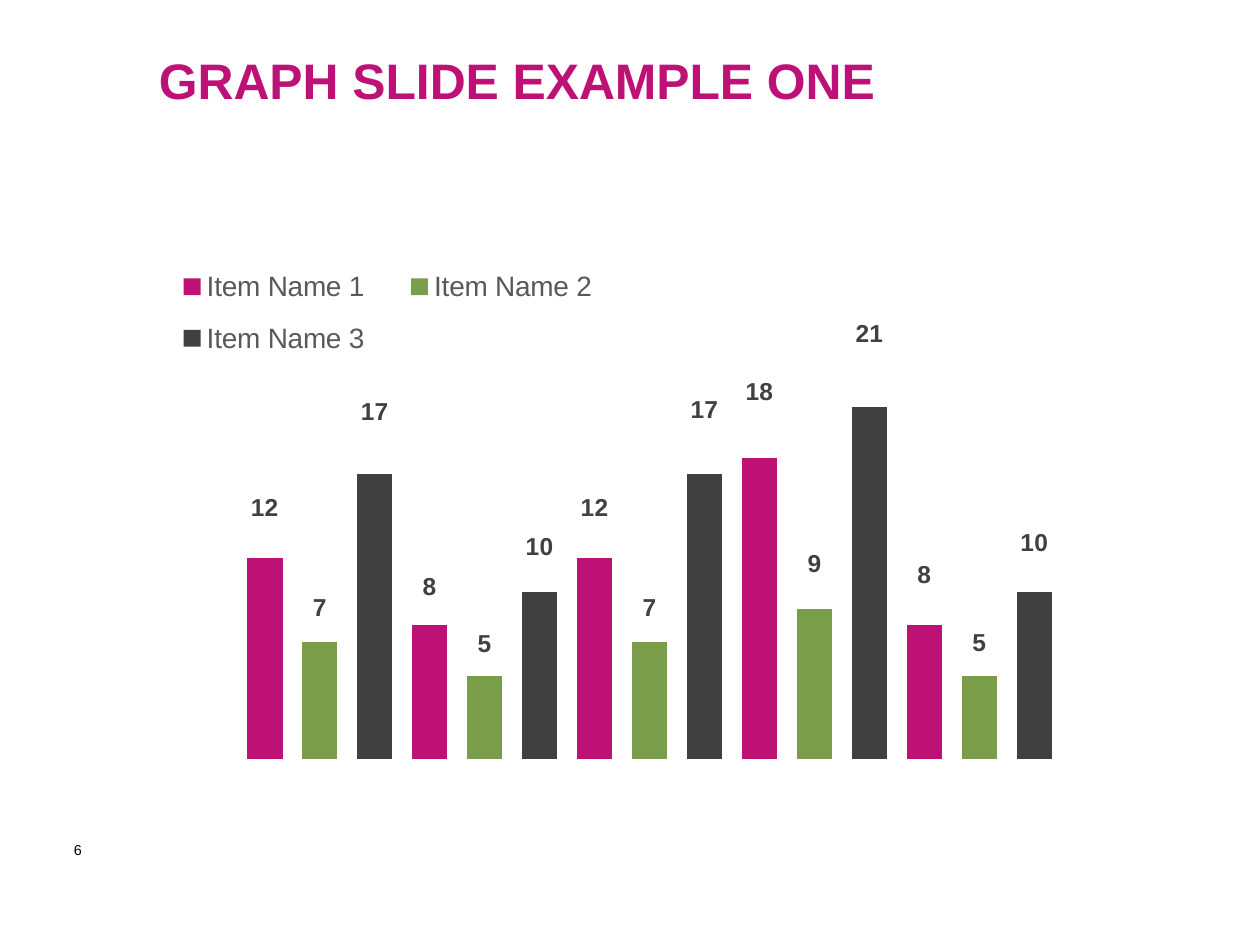
from lxml import etree
from pptx import Presentation
from pptx.chart.data import CategoryChartData
from pptx.dml.color import RGBColor
from pptx.enum import chart as charts, text
from pptx.oxml.ns import qn
from pptx.util import Cm, Pt

MAGENTA = RGBColor(0xBD, 0x11, 0x76)
GREEN = RGBColor(0x79, 0x9D, 0x49)
CHARCOAL = RGBColor(0x40, 0x40, 0x41)
LABEL_GREY = RGBColor(0x40, 0x40, 0x40)
LEGEND_GREY = RGBColor(0x59, 0x59, 0x59)
BLACK = RGBColor(0, 0, 0)

# Bars run left to right, cycling through the three items
VALUES = [12, 7, 17, 8, 5, 10, 12, 7, 17, 18, 9, 21, 8, 5, 10]
# How far each label is raised, in percent of the chart height
LIFTS = [10.6, 8.2, 12.6, 8.8, 7.8, 9.8, 10.6, 8.2, 12.8,
         13, 9.8, 14.3, 10.6, 8, 10.5]
ITEMS = [("Item Name 1", MAGENTA), ("Item Name 2", GREEN), ("Item Name 3", CHARCOAL)]


def style_font(font, size, color, bold=False):
    font.name, font.size, font.bold = "Arial", Pt(size), bold
    font.color.rgb = color


def set_layout(parent, index, modes, **percents):
    """Give a chart part a manual layout, in percent of the chart."""
    for old in parent.findall(qn("c:layout")):
        parent.remove(old)
    layout = etree.Element(qn("c:layout"))
    manual = etree.SubElement(layout, qn("c:manualLayout"))
    shares = {name: str(value / 100) for name, value in percents.items()}
    for name, value in {**modes, **shares}.items():
        etree.SubElement(manual, qn("c:" + name)).set("val", value)
    parent.insert(index, layout)


def add_title(page, left, top, width, height):
    title = page.shapes.title
    title.left, title.top, title.width, title.height = left, top, width, height
    frame = title.text_frame
    frame.text = "GRAPH SLIDE EXAMPLE ONE"
    frame.vertical_anchor = text.MSO_ANCHOR.MIDDLE
    frame.margin_bottom = Cm(0.33)
    para = frame.paragraphs[0]
    para.alignment = text.PP_ALIGN.LEFT
    style_font(para.font, 28.5, MAGENTA, True)


def add_bar_chart(page, left, top, width, height):
    data = CategoryChartData()
    data.categories = [str(number + 1) for number in range(len(VALUES))]
    stack = list(reversed(list(enumerate(ITEMS))))
    for item, (name, _) in stack:
        data.add_series(name, [value if slot % 3 == item else None
                               for slot, value in enumerate(VALUES)])
    chart = page.shapes.add_chart(charts.XL_CHART_TYPE.COLUMN_STACKED,
                                  left, top, width, height, data).chart
    chart.has_title = False
    style_font(chart.font, 10, BLACK)

    # Hidden axes
    chart.value_axis.minimum_scale, chart.value_axis.maximum_scale = 0, 25
    chart.value_axis.has_major_gridlines = False
    chart.value_axis.visible = chart.category_axis.visible = False

    # Bars and their raised labels, without leader lines
    plot = chart.plots[0]
    plot.gap_width, plot.overlap, plot.vary_by_categories = 55, 100, False
    for series, (item, (_, color)) in zip(plot.series, stack):
        series.format.fill.solid()
        series.format.fill.fore_color.rgb = color
        labels = series.data_labels
        labels.show_value = True
        labels.position = charts.XL_LABEL_POSITION.INSIDE_END
        style_font(labels.font, 14, LABEL_GREY, True)
        for slot in range(item, len(VALUES), 3):
            label = series.points[slot].data_label
            style_font(label.font, 14, LABEL_GREY, True)
            label.position = charts.XL_LABEL_POSITION.INSIDE_END
    for label in chart.element.iter(qn("c:dLbl")):
        slot = int(label.find(qn("c:idx")).get("val"))
        set_layout(label, 1, {}, x=0, y=-LIFTS[slot])
    for leader in chart.element.iter(qn("c:showLeaderLines")):
        leader.set("val", "0")

    # Legend over the shorter bars, and the plot below it
    chart.has_legend = True
    chart.legend.position = charts.XL_LEGEND_POSITION.RIGHT
    chart.legend.include_in_layout = False
    style_font(chart.legend.font, 16, LEGEND_GREY)
    edges = {"xMode": "edge", "yMode": "edge"}
    set_layout(next(chart.element.iter(qn("c:legend"))), 1, edges,
               x=0, y=16.9, w=49.9, h=19.2)
    set_layout(next(chart.element.iter(qn("c:plotArea"))), 0,
               {"layoutTarget": "inner", **edges},
               x=9.4, y=30.8, w=85.2, h=64.7)


def add_page_number(page, left, top, width, height):
    frame = page.shapes.add_textbox(left, top, width, height).text_frame
    frame.word_wrap = True
    frame.text = "6"
    style_font(frame.paragraphs[0].font, 8.2, BLACK)


def main():
    deck = Presentation()
    deck.slide_width, deck.slide_height = Cm(25.4), Cm(19.05)
    page = deck.slides.add_slide(deck.slide_layouts[5])
    add_page_number(page, Cm(1.24), Cm(16.84), Cm(1.09), Cm(1.37))
    add_bar_chart(page, Cm(2.95), Cm(2.84), Cm(19.51), Cm(13.06))
    add_title(page, Cm(2.95), Cm(0.86), Cm(19.2), Cm(1.7))
    deck.save("out.pptx")


if __name__ == "__main__":
    main()
